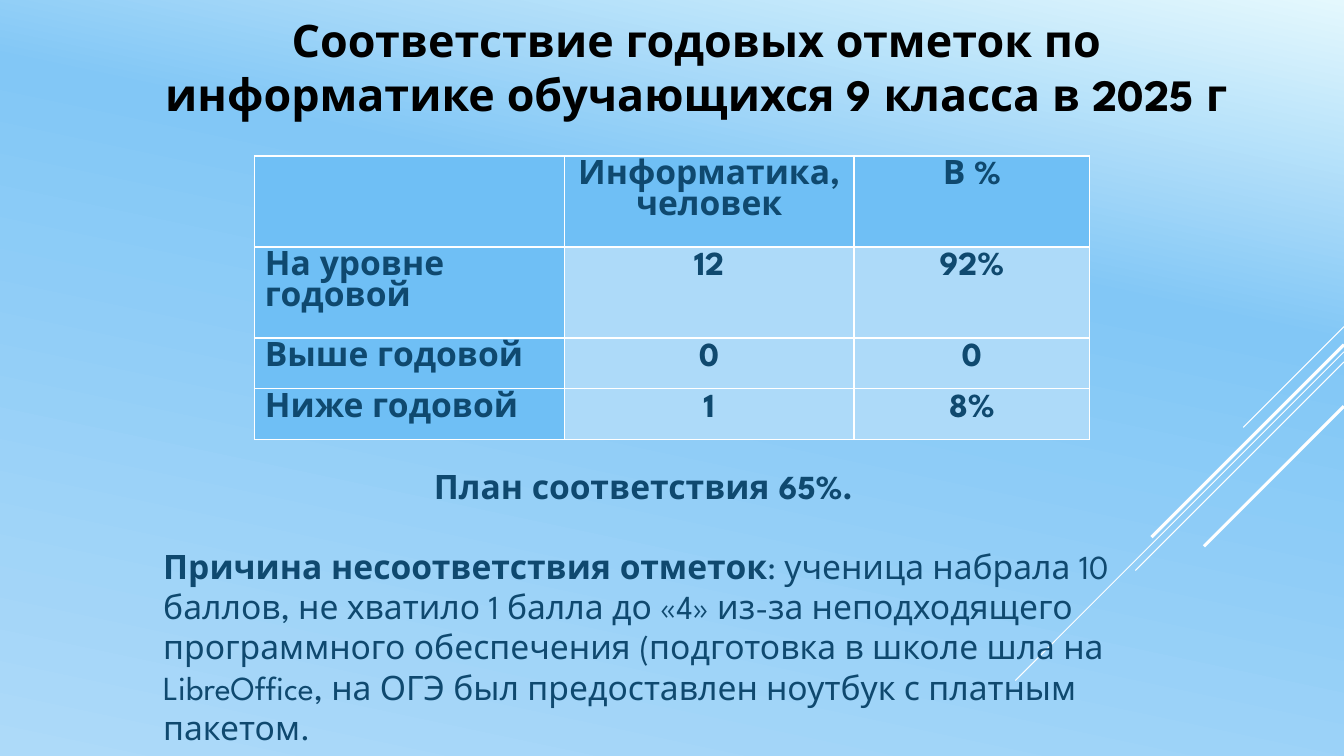
from copy import deepcopy
from pptx import Presentation
from pptx import util as u
from pptx.dml.color import RGBColor
from pptx.enum import shapes, text
from pptx.oxml import parse_xml
from pptx.oxml.ns import nsdecls, qn

# Content
TITLE = "Соответствие годовых отметок по информатике обучающихся 9 класса в 2025 г"
ROWS = [
    ("", "Информатика, человек", "В %"),
    ("На уровне годовой", "12", "92%"),
    ("Выше годовой", "0", "0"),
    ("Ниже годовой", "1", "8%"),
]
PLAN = "План соответствия 65%."
CAUSE = "Причина несоответствия отметок"
REASON = (": ученица набрала 10 баллов, не хватило 1 балла до «4» из-за "
          "неподходящего программного обеспечения (подготовка в школе шла на "
          "LibreOffice, на ОГЭ был предоставлен ноутбук с платным пакетом.")

# Theme and layout, in points
THEME = {
    "font": "League Spartan", "title": 32, "body": 24,
    "black": "000000", "ink": "0F496F", "white": "FFFFFF",
    "head": "6FBFF5", "cell": "ADDAF9",
    "back": [(0, "E4F8FD"), (0.33, "82C7F6"), (1, "ADDAF9")], "angle": 102,
}
WIDE, HIGH = 960, 540
COLS = [221, 207, 168.5]
TALL = [65, 65, 36.25, 36.25]
# Diagonal rays: height at the right edge, run to the left, line width
RAYS = [(233.3, 72, 0.75), (251.3, 234.7, 0.75), (258.5, 149, 0.75),
        (246.2, 137.5, 2.25), (290.2, 100, 2.25)]


def rgb(name):
    return RGBColor.from_string(THEME.get(name, name))


def add_run(para, words, size, color, bold=True):
    run = para.add_run()
    run.text = words
    font = run.font
    font.name, font.size, font.bold = THEME["font"], u.Pt(THEME[size]), bold
    font.color.rgb = rgb(color)


def add_box(slide, *place):
    frame = slide.shapes.add_textbox(*map(u.Pt, place)).text_frame
    frame.word_wrap = True
    frame.auto_size = text.MSO_AUTO_SIZE.SHAPE_TO_FIT_TEXT
    return frame


def set_edges(cell):
    props = cell._tc.get_or_add_tcPr()
    for i, side in enumerate(("lnL", "lnR", "lnT", "lnB")):
        props.insert(i, parse_xml(
            f'<a:{side} {nsdecls("a")} w="12700"><a:solidFill>'
            f'<a:srgbClr val="{THEME["white"]}"/></a:solidFill></a:{side}>'))


def add_back(slide):
    fill = slide.background.fill
    fill.gradient()
    fill.gradient_angle = 360 - THEME["angle"]
    stops = next(slide.element.iter(qn("a:gsLst")))
    stops.append(deepcopy(stops[0]))
    for stop, (pos, color) in zip(fill.gradient_stops, THEME["back"]):
        stop.position, stop.color.rgb = pos, rgb(color)


def add_rays(slide):
    for top, run, width in RAYS:
        ray = slide.shapes.add_connector(
            shapes.MSO_CONNECTOR.STRAIGHT,
            *map(u.Pt, (WIDE, top, WIDE - run, top + run)))
        ray.line.color.rgb = rgb("white")
        ray.line.width = u.Pt(width)
        ray._element.spPr.append(parse_xml(f'<a:effectLst {nsdecls("a")}/>'))


def add_grid(slide):
    place = map(u.Pt, (182, 111.5, sum(COLS), sum(TALL)))
    grid = slide.shapes.add_table(len(ROWS), len(COLS), *place).table
    grid.first_row = grid.horz_banding = False
    for col, width in zip(grid.columns, COLS):
        col.width = u.Pt(width)
    for r, row in enumerate(ROWS):
        grid.rows[r].height = u.Pt(TALL[r])
        for c, words in enumerate(row):
            cell = grid.cell(r, c)
            cell.fill.solid()
            cell.fill.fore_color.rgb = rgb("cell" if r and c else "head")
            set_edges(cell)
            para = cell.text_frame.paragraphs[0]
            para.line_spacing = u.Pt(22)
            if c:
                para.alignment = text.PP_ALIGN.CENTER
            if words:
                add_run(para, words, "body", "ink")


def main():
    deck = Presentation()
    deck.slide_width, deck.slide_height = u.Pt(WIDE), u.Pt(HIGH)
    slide = deck.slides.add_slide(deck.slide_layouts[6])
    add_back(slide)
    add_rays(slide)

    # Title
    para = add_box(slide, 109.5, 5.75, 776, 85).paragraphs[0]
    para.alignment = text.PP_ALIGN.CENTER
    add_run(para, TITLE, "title", "black")

    add_grid(slide)

    # Plan and reason
    frame = add_box(slide, 109.5, 329, 700, 211)
    para = frame.paragraphs[0]
    para.alignment = text.PP_ALIGN.CENTER
    add_run(para, PLAN, "body", "ink")
    para = frame.add_paragraph()
    para.space_before = u.Pt(28.5)
    add_run(para, CAUSE, "body", "ink")
    add_run(para, REASON, "body", "ink", False)

    deck.save("out.pptx")


if __name__ == "__main__":
    main()
